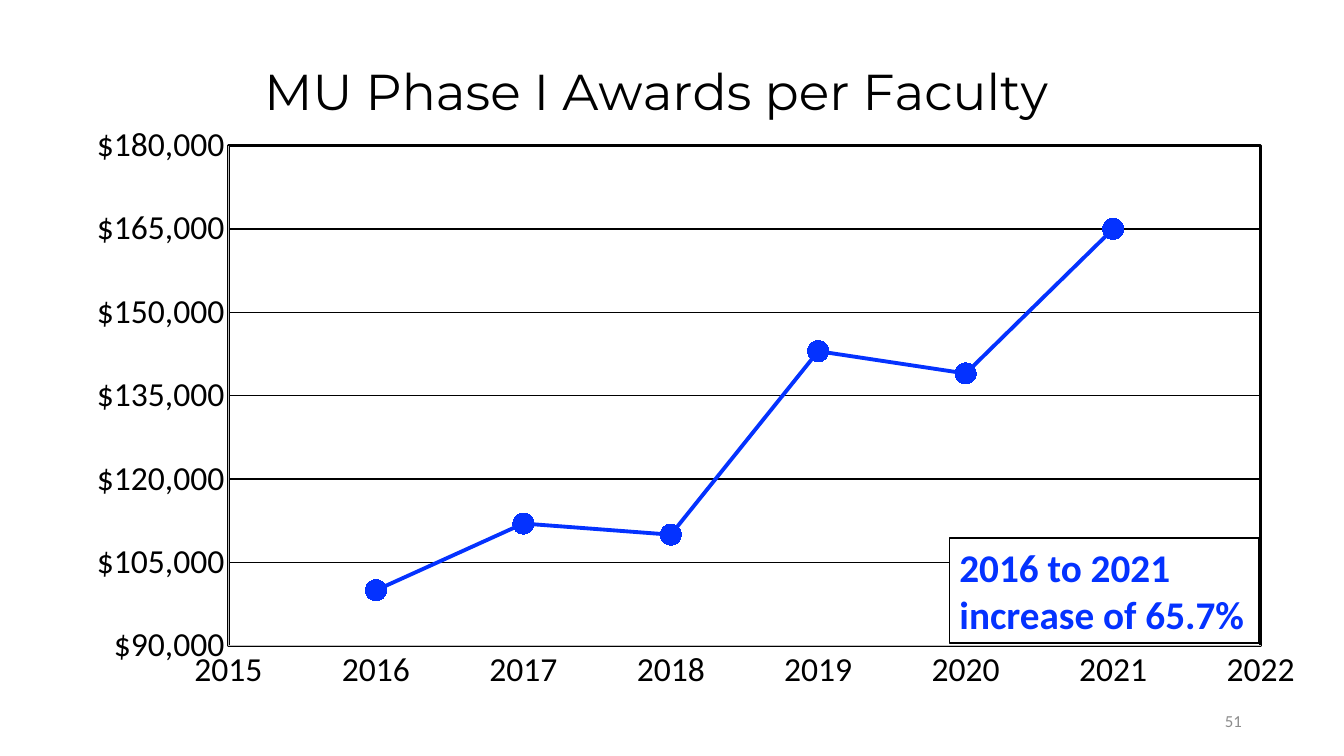
from pptx import Presentation
from pptx.chart.data import XyChartData
from pptx.dml.color import RGBColor
from pptx.enum.chart import XL_CHART_TYPE as Kind, XL_MARKER_STYLE as Mark
from pptx.enum.chart import XL_TICK_MARK as Tick
from pptx.enum.shapes import MSO_SHAPE as Shape
from pptx.enum.text import MSO_ANCHOR as Anchor, PP_ALIGN as Align
from pptx.oxml import parse_xml
from pptx.oxml.ns import nsdecls, qn
from pptx.util import Cm, Pt

BLACK = RGBColor(0, 0, 0)
WHITE = RGBColor(255, 255, 255)
BLUE = RGBColor(0x04, 0x32, 0xFF)
GRAY = RGBColor(0x8C, 0x8C, 0x8C)
PALE = RGBColor(0xBF, 0xBF, 0xBF)


def style(font, size, color, face="Calibri", bold=False):
    font.size, font.bold, font.name = Pt(size), bold, face
    font.color.rgb = color


def place(node, index, inner="", **parts):
    """Give a chart part a fixed place, in fractions of the chart."""
    for old in node.findall(qn("c:layout")):
        node.remove(old)
    modes = "".join(f'<c:{k}Mode val="edge"/>' for k in "xy")
    sizes = "".join(f'<c:{k} val="{v}"/>' for k, v in parts.items())
    node.insert(index, parse_xml(
        f'<c:layout {nsdecls("c")}><c:manualLayout>{inner}{modes}{sizes}'
        '</c:manualLayout></c:layout>'))


deck = Presentation()
deck.slide_width, deck.slide_height = Cm(33.87), Cm(19.05)
slide = deck.slides.add_slide(deck.slide_layouts[6])

# Chart
data = XyChartData()
awards = data.add_series("Series 1")
funds = [100000, 112000, 110000, 143000, 139000, 165000]
for year, sum_ in enumerate(funds, 2016):
    awards.add_data_point(year, sum_)
chart = slide.shapes.add_chart(Kind.XY_SCATTER_LINES, Cm(0), Cm(0.03),
                               Cm(33.87), Cm(19.05), data).chart
chart.has_legend = False
style(chart.font, 24, BLACK)

# Chart title
chart.has_title = True
title = chart.chart_title
title.text_frame.text = "MU Phase I Awards per Faculty"
style(title.text_frame.paragraphs[0].runs[0].font, 36, BLACK, "Montserrat")
place(title._element, 1, x=0.19, y=0.06)

# Plot frame
plot = chart._chartSpace.chart.plotArea
place(plot, 0, '<c:layoutTarget val="inner"/>', x=0.17, y=0.191, w=0.768, h=0.662)
plot.append(parse_xml(
    f'<c:spPr {nsdecls("c", "a")}><a:noFill/><a:ln w="25400"><a:solidFill>'
    f'<a:srgbClr val="{BLACK}"/></a:solidFill></a:ln></c:spPr>'))

# Axes
years, money = chart.category_axis, chart.value_axis
for axis, low, high, step, form in (
        (years, 2015, 2022, 1, "General"),
        (money, 90000, 180000, 15000, '"$"#,##0')):
    axis.minimum_scale, axis.maximum_scale, axis.major_unit = low, high, step
    axis.major_tick_mark = axis.minor_tick_mark = Tick.NONE
    axis.tick_labels.number_format = form
    axis.tick_labels.number_format_is_linked = False
    style(axis.tick_labels.font, 24, BLACK)
    axis.format.line.color.rgb = PALE
    axis.format.line.width = Pt(0.75)
years.has_major_gridlines = False
money.has_major_gridlines = True
grid = money.major_gridlines.format.line
grid.color.rgb, grid.width = BLACK, Pt(1)

# Line and markers
line = chart.plots[0].series[0]
line.smooth = False
line.format.line.color.rgb = BLUE
line.format.line.width = Pt(2.75)
line.marker.style, line.marker.size = Mark.CIRCLE, 15
dot = line.marker.format
dot.fill.solid()
dot.fill.fore_color.rgb = BLUE
dot.line.color.rgb = BLUE

# Growth note
note = slide.shapes.add_shape(Shape.RECTANGLE, Cm(23.93), Cm(13.56), Cm(7.8), Cm(2.64))
note.shadow.inherit = False
note.fill.solid()
note.fill.fore_color.rgb = WHITE
note.line.color.rgb, note.line.width = BLACK, Pt(1)

# Page number
page = slide.shapes.add_textbox(Cm(23.93), Cm(17.65), Cm(7.62), Cm(1.02))

for box, text, side, anchor, size, color, bold in (
        (note, "2016 to 2021 increase of 65.7%", Align.LEFT, Anchor.TOP, 28, BLUE, True),
        (page, "51", Align.RIGHT, Anchor.MIDDLE, 12, GRAY, False)):
    frame = box.text_frame
    frame.word_wrap, frame.vertical_anchor = True, anchor
    frame.text = text
    para = frame.paragraphs[0]
    para.alignment = side
    style(para.runs[0].font, size, color, bold=bold)

deck.save("out.pptx")
